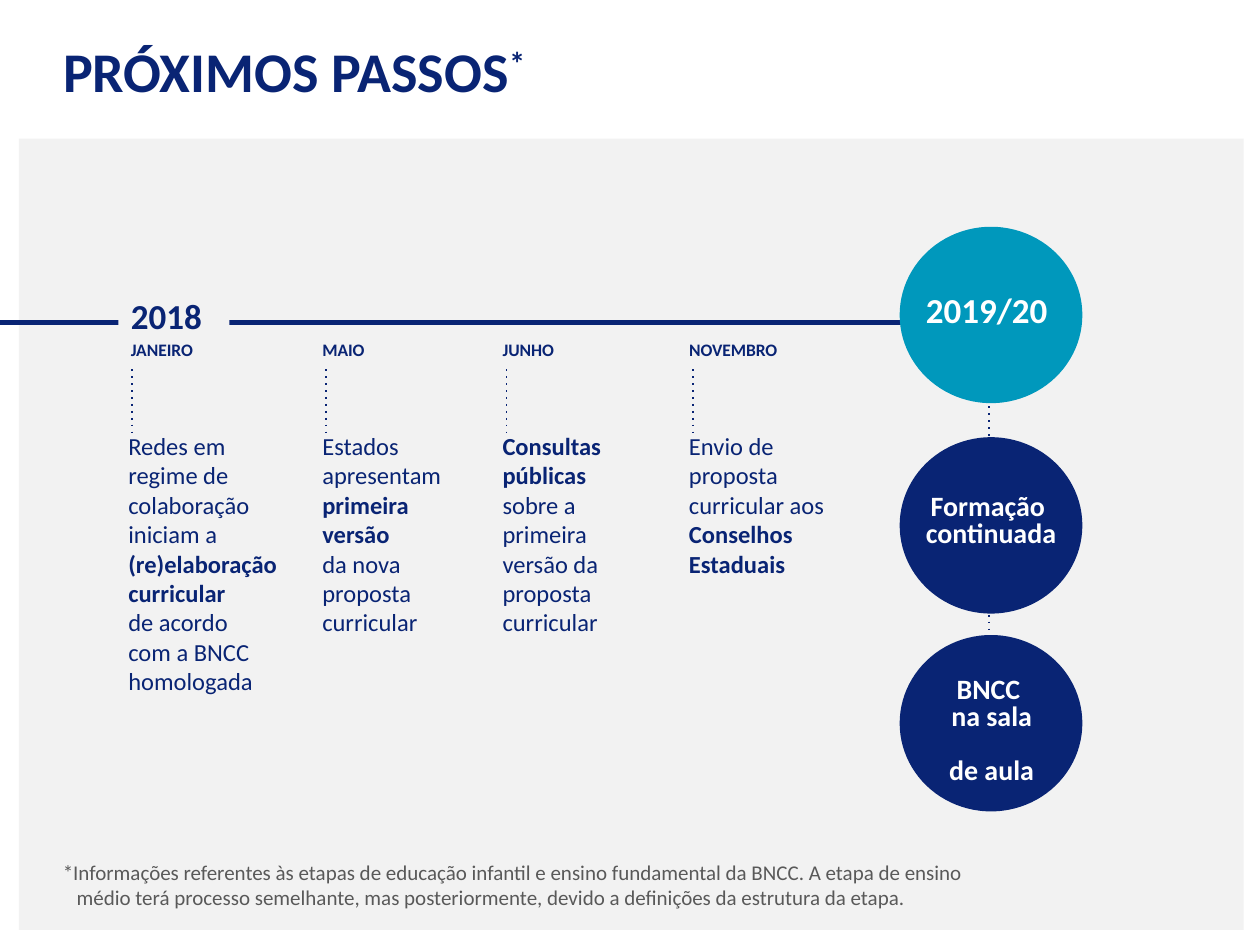
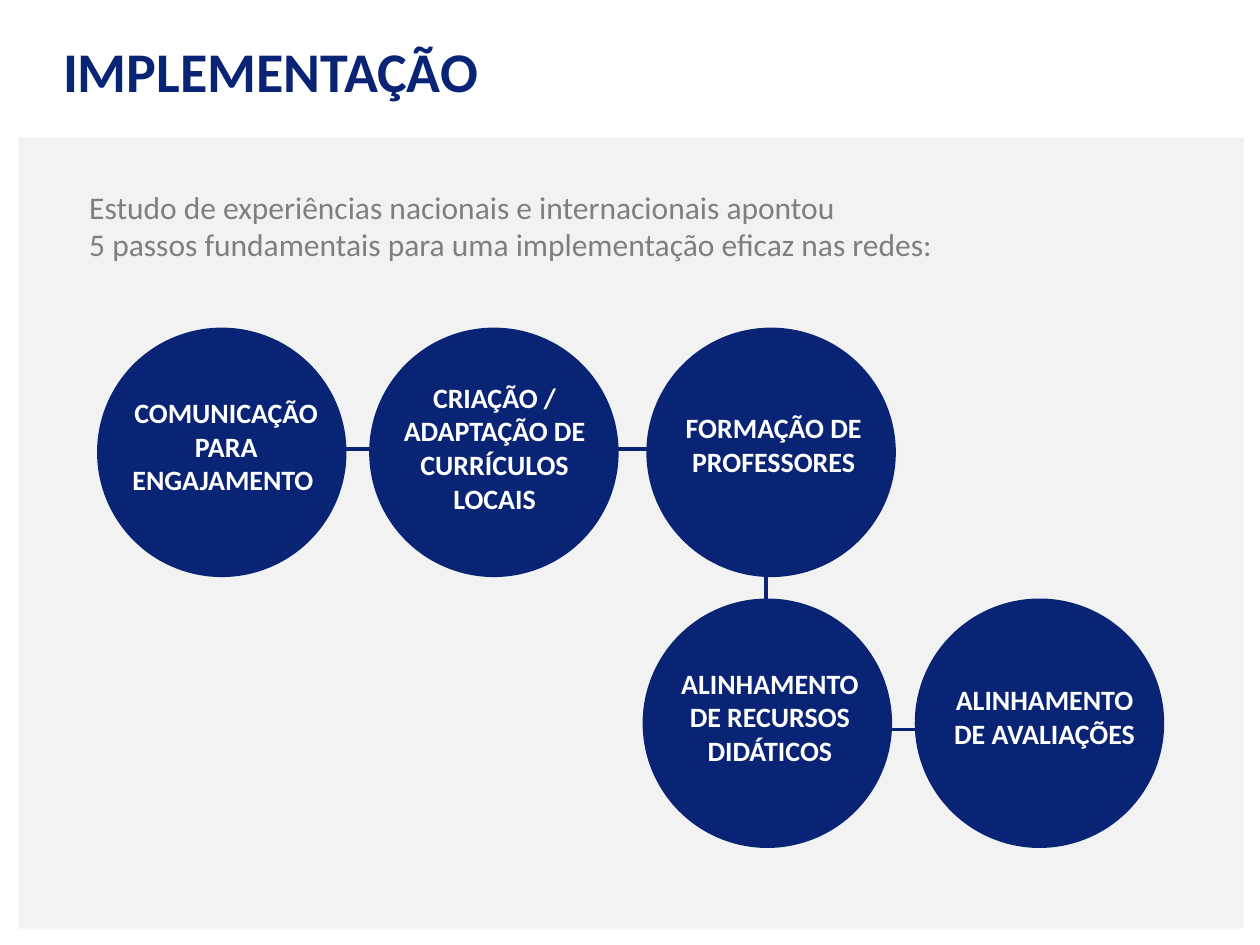
import pptx
import pptx.util
import pptx.dml.color
import pptx.enum.shapes
import pptx.enum.text
import pptx.oxml.ns
import lxml.etree

Inches = pptx.util.Inches
Pt = pptx.util.Pt
Align = pptx.enum.text.PP_ALIGN
Shape = pptx.enum.shapes.MSO_SHAPE

# Shared style
FONT = "Calibri"
NAVY, TEAL, WHITE = "092474", "0098BC", "FFFFFF"
PANEL, NOTE_GRAY, INTRO_GRAY = "F2F2F2", "595959", "7F7F7F"
TITLE_BOX = (0.4, 0.24, 6.12, 0.64)

# Slide 1 content; runs are (text, bold)
STEPS_TITLE = "PRÓXIMOS PASSOS"
YEAR = "2018"
MILESTONES = [  # month, month left and width, text left and width, runs
    ("JANEIRO", 0.94, 0.71, 0.92, 1.4, [
        ("Redes em regime de colaboração iniciam a ", False),
        ("(re)elaboração curricular \n", True),
        ("de acordo \ncom a BNCC homologada", False)]),
    ("MAIO", 2.46, 0.54, 2.46, 1.27, [
        ("Estados apresentam ", False),
        ("primeira versão \n", True),
        ("da nova proposta curricular", False)]),
    ("JUNHO", 3.89, 0.62, 3.89, 1.27, [
        ("Consultas públicas ", True),
        ("sobre a primeira versão da proposta curricular", False)]),
    ("NOVEMBRO", 5.37, 0.92, 5.37, 1.27, [
        ("Envio de proposta curricular aos ", False),
        ("Conselhos Estaduais", True)]),
]
GOALS_TOP = (1.8, 3.47, 5.04)
GOALS = [  # label box, paragraphs
    ((7.24, 3.88, 1.25, 0.54), ["Formação \ncontinuada"]),
    ((7.43, 5.33, 0.88, 0.76), ["BNCC \nna sala ", "de aula"]),
]
FOOTNOTE = ("*Informações referentes às etapas de educação infantil e ensino "
            "fundamental da BNCC. A etapa de ensino\nmédio terá processo semelhante, "
            "mas posteriormente, devido a definições da estrutura da etapa.")

# Slide 2 content
ROLLOUT_TITLE = "IMPLEMENTAÇÃO"
INTRO = ("Estudo de experiências nacionais e internacionais apontou \n"
         "5 passos fundamentais para uma implementação eficaz nas redes:")
STEP_SIZE = 1.98
STEPS = [  # circle left and top, label box, label
    (0.77, 2.6, (0.94, 3.09, 1.71, 0.84), "COMUNICAÇÃO PARA ENGAJAMENTO "),
    (2.93, 2.6, (3.07, 2.97, 1.71, 1.09), "CRIAÇÃO /\nADAPTAÇÃO DE CURRÍCULOS LOCAIS"),
    (5.13, 2.6, (5.28, 3.21, 1.72, 0.59), "FORMAÇÃO DE PROFESSORES"),
    (5.1, 4.75, (5.25, 5.24, 1.72, 0.84), "ALINHAMENTO DE RECURSOS DIDÁTICOS"),
    (7.26, 4.75, (7.43, 5.37, 1.72, 0.59), "ALINHAMENTO DE AVALIAÇÕES"),
]
STEP_LINKS = [
    ((5.56, 5.79), (8.87, 5.79)),
    ((1.61, 3.56), (6.26, 3.56)),
    ((6.08, 5.79), (6.08, 4.03)),
]


def rgb(color):
    return pptx.dml.color.RGBColor.from_string(color)


def inches(box):
    return [Inches(length) for length in box]


def add_runs(paragraph, runs, size, color):
    """Write (text, bold) runs, turning each newline into a line break."""
    for text, bold in runs:
        for index, line in enumerate(text.split("\n")):
            if index:
                paragraph.add_line_break()
            if line:
                run = paragraph.add_run()
                run.text = line
                run.font.name = FONT
                run.font.size = Pt(size)
                run.font.bold = bold
                run.font.color.rgb = rgb(color)


def add_text(slide, box, runs, size, color, align=Align.LEFT, wrap=True):
    frame = slide.shapes.add_textbox(*inches(box)).text_frame
    frame.word_wrap = wrap
    paragraph = frame.paragraphs[0]
    paragraph.alignment = align
    add_runs(paragraph, runs, size, color)
    return frame


def add_block(slide, kind, box, color):
    block = slide.shapes.add_shape(kind, *inches(box))
    block.shadow.inherit = False
    block.fill.solid()
    block.fill.fore_color.rgb = rgb(color)
    block.line.fill.background()
    return block


def add_line(slide, start, end, width, dotted=False):
    connector = slide.shapes.add_connector(
        pptx.enum.shapes.MSO_CONNECTOR.STRAIGHT, *inches(start + end))
    connector.line.color.rgb = rgb(NAVY)
    connector.line.width = Pt(width)
    qn = pptx.oxml.ns.qn
    if dotted:
        outline = connector.line._get_or_add_ln()
        lxml.etree.SubElement(outline, qn("a:prstDash")).set("val", "dot")
    lxml.etree.SubElement(connector._element.spPr, qn("a:effectLst"))


def add_titled_slide(deck, title, panel_top):
    slide = deck.slides.add_slide(deck.slide_layouts[5])
    heading = slide.shapes.title
    heading.left, heading.top, heading.width, heading.height = inches(TITLE_BOX)
    frame = heading.text_frame
    frame.auto_size = pptx.enum.text.MSO_AUTO_SIZE.NONE
    frame.vertical_anchor = pptx.enum.text.MSO_ANCHOR.TOP
    frame.word_wrap = True
    frame.paragraphs[0].alignment = Align.LEFT
    add_runs(frame.paragraphs[0], [(title, True)], 32, NAVY)
    add_block(slide, Shape.RECTANGLE, (0.15, panel_top, 9.72, 6.28), PANEL)
    return slide


def build_next_steps(deck):
    slide = add_titled_slide(deck, STEPS_TITLE, 1.1)
    heading = slide.shapes.title.text_frame.paragraphs[0]
    add_runs(heading, [("*", True)], 32, NAVY)
    heading.runs[-1]._r.get_or_add_rPr().set("baseline", "30000")

    # Timeline and the column of goals at its end
    add_line(slide, (7.85, 2.95), (7.85, 5.38), 1, dotted=True)
    add_line(slide, (7.72, 2.56), (0, 2.56), 3)
    for top, color in zip(GOALS_TOP, (TEAL, NAVY, NAVY)):
        add_block(slide, Shape.OVAL, (7.14, top, 1.45, 1.4), color)
    add_text(slide, (7.25, 2.24, 1.33, 0.44), [("2019/20", True)], 20, WHITE)
    for box, paragraphs in GOALS:
        label = add_text(slide, box, [(paragraphs[0], True)], 16, WHITE,
                         Align.CENTER, wrap=False)
        for text in paragraphs[1:]:
            paragraph = label.add_paragraph()
            paragraph.alignment = Align.CENTER
            paragraph.space_before = Pt(15.5)
            add_runs(paragraph, [(text, True)], 16, WHITE)
        for paragraph in label.paragraphs:
            paragraph.line_spacing = 0.8

    # Year marker
    marker = add_block(slide, Shape.RECTANGLE, (0.94, 2.37, 0.88, 0.36), PANEL)
    year = marker.text_frame.paragraphs[0]
    year.alignment = Align.LEFT
    year.line_spacing = Pt(17.2)
    add_runs(year, [(YEAR, True)], 20, NAVY)

    # Milestones
    for month, month_left, month_width, left, width, runs in MILESTONES:
        add_text(slide, (month_left, 2.64, month_width, 0.27),
                 [(month, True)], 10, NAVY, wrap=False)
        add_line(slide, (left + 0.13, 2.93), (left + 0.13, 3.43), 1, dotted=True)
        add_text(slide, (left, 3.37, width, 2.19), runs, 14, NAVY)

    # Footnote with a hanging second line
    note = add_text(slide, (0.4, 6.77, 7.65, 0.51), [(FOOTNOTE, False)], 12, NOTE_GRAY)
    properties = note.paragraphs[0]._p.get_or_add_pPr()
    properties.set("marL", str(Inches(0.11)))
    properties.set("indent", str(-Inches(0.11)))


def build_rollout(deck):
    slide = add_titled_slide(deck, ROLLOUT_TITLE, 1.09)
    add_text(slide, (0.61, 1.44, 8.64, 0.71), [(INTRO, False)], 18, INTRO_GRAY)

    # Links lie behind the step circles
    for start, end in STEP_LINKS:
        add_line(slide, start, end, 2.25)
    for left, top, label_box, label in STEPS:
        add_block(slide, Shape.OVAL, (left, top, STEP_SIZE, STEP_SIZE), NAVY)
        add_text(slide, label_box, [(label, True)], 16, WHITE, Align.CENTER)


def main():
    deck = pptx.Presentation()
    deck.slide_width, deck.slide_height = Inches(10), Inches(7.5)
    build_next_steps(deck)
    build_rollout(deck)
    deck.save("out.pptx")


if __name__ == "__main__":
    main()
